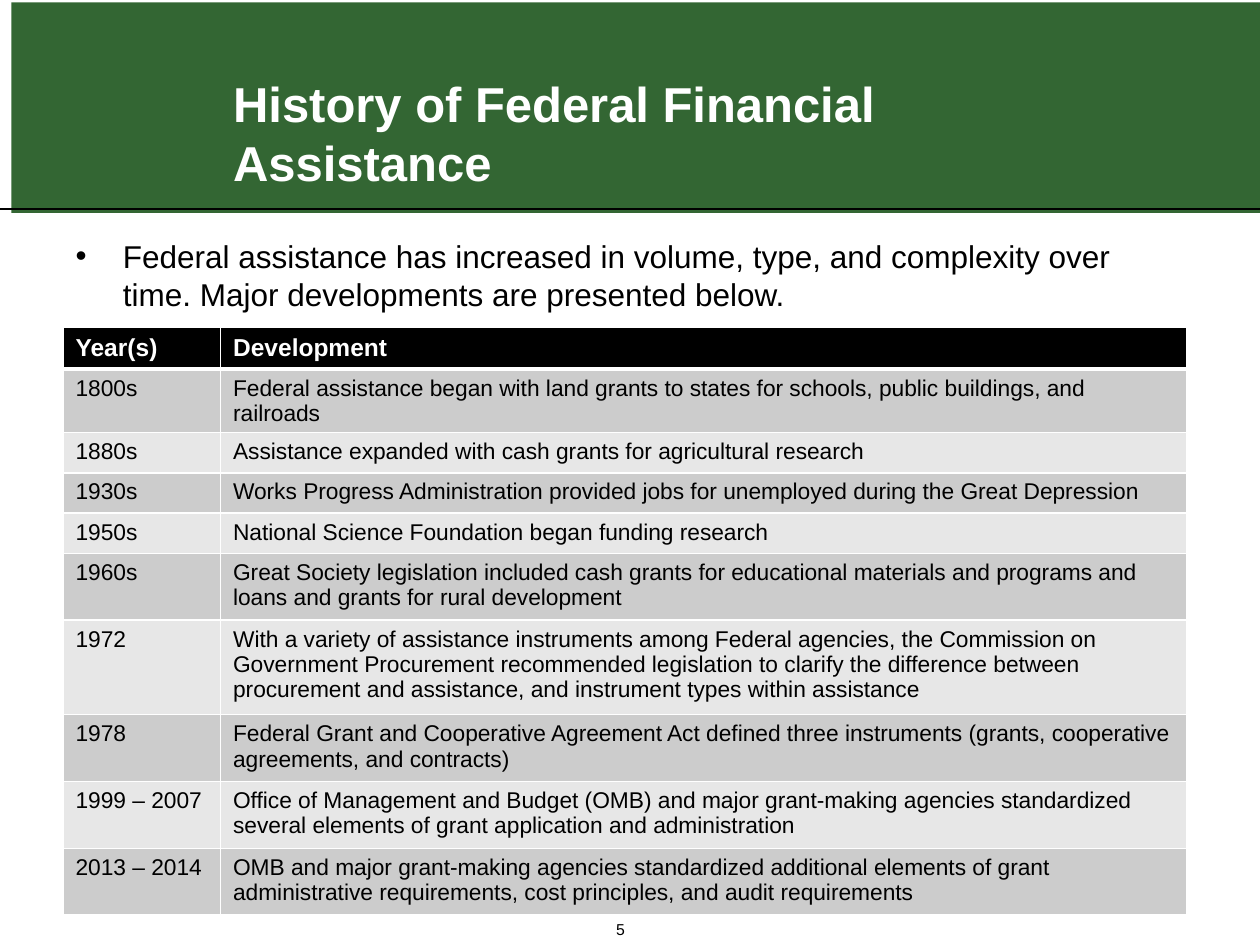
from lxml.etree import SubElement
from pptx import Presentation
from pptx.dml.color import RGBColor
from pptx.enum.shapes import MSO_CONNECTOR, MSO_SHAPE
from pptx.enum.text import MSO_ANCHOR, MSO_AUTO_SIZE, PP_ALIGN
from pptx.oxml.ns import qn
from pptx.util import Inches, Pt

# Content
TITLE = "History of Federal Financial Assistance"
INTRO = ("Federal assistance has increased in volume, type, and complexity over time. "
         "Major developments are presented below.")
PAGE = "5"
COL_WIDTHS = (1.25, 7.67)
ROWS = [  # height, years, development
    (0.33, "Year(s)", "Development"),
    (0.5, "1800s", "Federal assistance began with land grants to states for schools, "
                   "public buildings, and railroads"),
    (0.32, "1880s", "Assistance expanded with cash grants for agricultural research"),
    (0.32, "1930s", "Works Progress Administration provided jobs for unemployed "
                    "during the Great Depression"),
    (0.32, "1950s", "National Science Foundation began funding research"),
    (0.53, "1960s", "Great Society legislation included cash grants for educational "
                    "materials and programs and loans and grants for rural development"),
    (0.75, "1972", "With a variety of assistance instruments among Federal agencies, the "
                   "Commission on Government Procurement recommended legislation to clarify "
                   "the difference between procurement and assistance, and instrument types "
                   "within assistance"),
    (0.53, "1978", "Federal Grant and Cooperative Agreement Act defined three instruments "
                   "(grants, cooperative agreements, and contracts)"),
    (0.53, "1999 – 2007", "Office of Management and Budget (OMB) and major grant-making "
                          "agencies standardized several elements of grant application "
                          "and administration"),
    (0.53, "2013 – 2014", "OMB and major grant-making agencies standardized additional "
                          "elements of grant administrative requirements, cost principles, "
                          "and audit requirements"),
]

THEME = {
    "font": "Arial",
    "green": "336633", "black": "000000", "white": "FFFFFF",
    "bands": ("CCCCCC", "E7E7E7"),
    "title": 28, "intro": 18, "header": 14, "cell": 13, "page": 9,
}


def rgb(name):
    return RGBColor.from_string(THEME[name])


def place(shape, *box):
    shape.left, shape.top, shape.width, shape.height = map(Inches, box)


def write(tf, text, size, color="black", bold=False, align=PP_ALIGN.LEFT):
    tf.text = text
    tf.word_wrap = True
    p = tf.paragraphs[0]
    p.alignment = align
    font = p.runs[0].font
    font.name, font.size, font.bold = THEME["font"], Pt(THEME[size]), bold
    font.color.rgb = rgb(color)


def add_borders(cell, bottom=1, top=1):
    tcPr = cell._tc.get_or_add_tcPr()
    for side, width in (("L", 1), ("R", 1), ("T", top), ("B", bottom)):
        ln = SubElement(tcPr, qn(f"a:ln{side}"), w=str(Pt(width)))
        fill = SubElement(ln, qn("a:solidFill"))
        SubElement(fill, qn("a:srgbClr"), val=THEME["white"])


prs = Presentation()
prs.slide_width, prs.slide_height = Inches(10), Inches(7.5)
s = prs.slides.add_slide(prs.slide_layouts[1])
title, body = s.placeholders

# Banner and rule, placed behind the title
banner = s.shapes.add_shape(MSO_SHAPE.RECTANGLE, Inches(0.09), Inches(0.02),
                            Inches(10), Inches(1.67))
banner.shadow.inherit = False
banner.fill.solid()
banner.fill.fore_color.rgb = rgb("green")
banner.line.fill.background()

rule = s.shapes.add_connector(MSO_CONNECTOR.STRAIGHT, 0, Inches(1.66),
                              Inches(10), Inches(1.66))
rule.line.color.rgb = rgb("black")
rule.line.width = Pt(0.75)
SubElement(rule._element.spPr, qn("a:effectLst"))

for shape in (banner, rule):
    title._element.addprevious(shape._element)

# Title
place(title, 1.75, 0.36, 6.53, 1.21)
write(title.text_frame, TITLE, "title", "white", bold=True)
title.text_frame.vertical_anchor = MSO_ANCHOR.BOTTOM
title.text_frame.auto_size = MSO_AUTO_SIZE.NONE

# Introduction, without bullet or indent
place(body, 0.5, 1.83, 9, 4.95)
p = body.text_frame.paragraphs[0]
pPr = p._p.get_or_add_pPr()
pPr.set("marL", "0")
pPr.set("indent", "0")
SubElement(pPr, qn("a:buNone"))
write(body.text_frame, INTRO, "intro")
p.space_before = Pt(0)
body.text_frame.auto_size = MSO_AUTO_SIZE.NONE

# Table of developments
table = s.shapes.add_table(len(ROWS), len(COL_WIDTHS), Inches(0.5), Inches(2.6),
                           Inches(sum(COL_WIDTHS)),
                           Inches(sum(row[0] for row in ROWS))).table
for col, width in zip(table.columns, COL_WIDTHS):
    col.width = Inches(width)
for i, (height, *texts) in enumerate(ROWS):
    table.rows[i].height = Inches(height)
    header = i == 0
    for cell, text in zip(table.rows[i].cells, texts):
        add_borders(cell, bottom=3 if header else 1, top=3 if i == 1 else 1)
        cell.fill.solid()
        cell.fill.fore_color.rgb = (rgb("black") if header else
                                    RGBColor.from_string(THEME["bands"][(i - 1) % 2]))
        if header:
            write(cell.text_frame, text, "header", "white", bold=True)
        else:
            write(cell.text_frame, text, "cell")

# Page number
page = s.shapes.add_textbox(Inches(4), Inches(7.33), Inches(1.85), Inches(0.17))
write(page.text_frame, PAGE, "page", align=PP_ALIGN.CENTER)
page.text_frame.vertical_anchor = MSO_ANCHOR.BOTTOM

prs.save("out.pptx")
